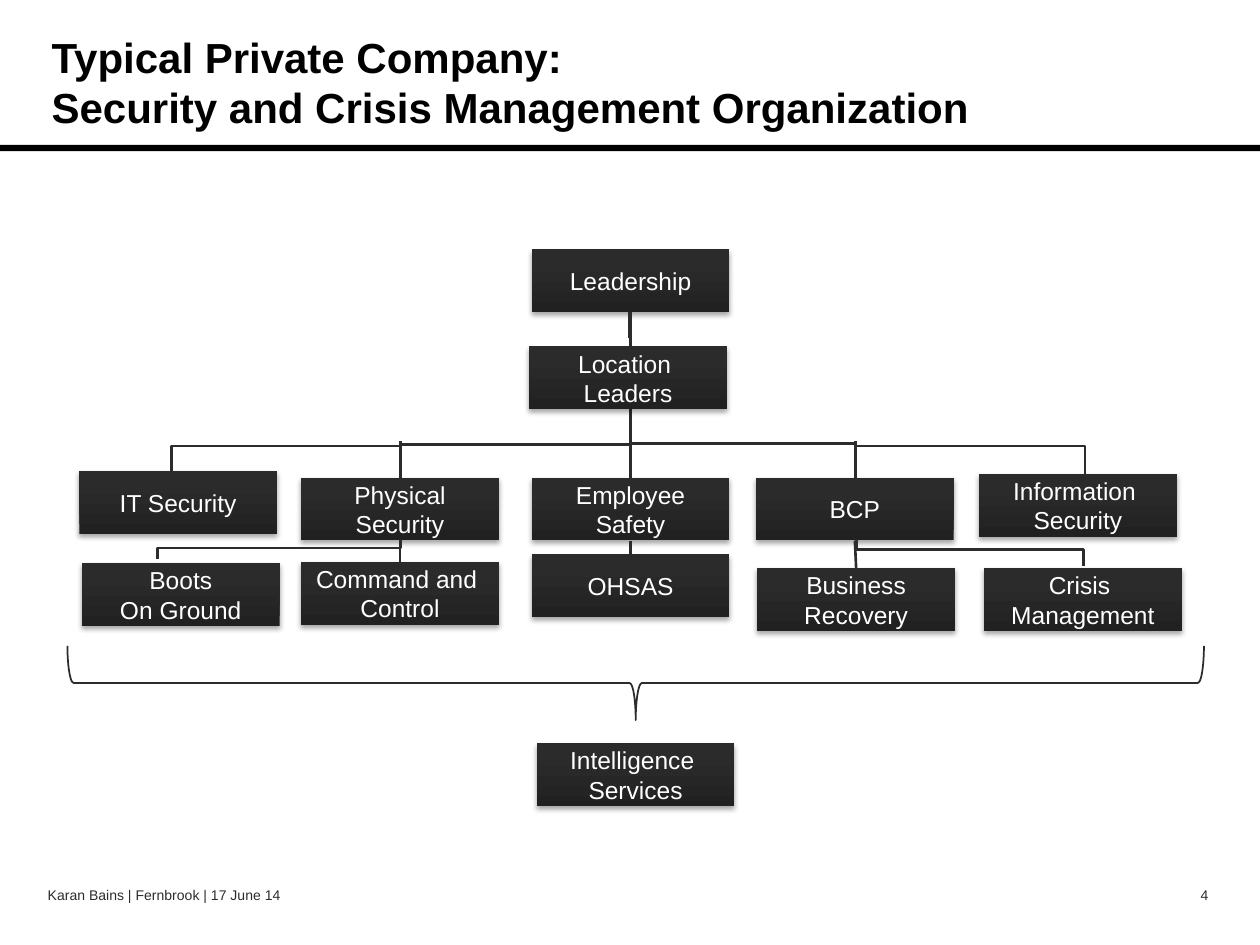
from lxml.etree import SubElement
from pptx import Presentation
from pptx.dml.color import RGBColor
from pptx.enum.shapes import MSO_CONNECTOR, MSO_SHAPE
from pptx.enum.text import MSO_ANCHOR, PP_ALIGN
from pptx.oxml.ns import qn
from pptx.util import Inches, Pt

BLACK = RGBColor(0x00, 0x00, 0x00)
WHITE = RGBColor(0xFF, 0xFF, 0xFF)
CHARCOAL = RGBColor(0x2C, 0x2C, 0x2C)
BOX_TOP = RGBColor(0x2B, 0x2B, 0x2B)
BOX_BOTTOM = RGBColor(0x21, 0x21, 0x21)
FONT = "Arial"
BOX_WIDTH, BOX_HEIGHT = 1.57, 0.5

presentation = Presentation()
presentation.slide_width, presentation.slide_height = Inches(10), Inches(7.5)
slide = presentation.slides.add_slide(presentation.slide_layouts[5])
shapes = slide.shapes


def add_box(text, left, top):
    """Add one dark organization box with a soft shadow."""
    box = shapes.add_shape(MSO_SHAPE.RECTANGLE, Inches(left), Inches(top),
                           Inches(BOX_WIDTH), Inches(BOX_HEIGHT))
    box.fill.gradient()
    box.fill.gradient_angle = 90
    for stop, color, position in zip(box.fill.gradient_stops, (BOX_BOTTOM, BOX_TOP), (0, 0.8)):
        stop.color.rgb = color
        stop.position = position
    box.line.fill.background()
    box.shadow.inherit = False
    effects = box._element.spPr.find(qn("a:effectLst"))
    shadow = SubElement(effects, qn("a:outerShdw"), blurRad=str(Pt(3.1)),
                        dist=str(Pt(1.8)), dir="5400000", rotWithShape="0")
    shadow_color = SubElement(shadow, qn("a:srgbClr"), val=str(BLACK))
    SubElement(shadow_color, qn("a:alpha"), val="35000")

    frame = box.text_frame
    frame.margin_left = frame.margin_right = frame.margin_top = frame.margin_bottom = 0
    frame.word_wrap = False
    frame.vertical_anchor = MSO_ANCHOR.MIDDLE
    frame.text = text
    for paragraph in frame.paragraphs:
        paragraph.alignment = PP_ALIGN.CENTER
        paragraph.font.name, paragraph.font.size = FONT, Pt(14)
        paragraph.font.color.rgb = WHITE
    return box


def add_line(kind, x1, y1, x2, y2, width=1.5):
    """Add a plain charcoal connector."""
    line = shapes.add_connector(kind, Inches(x1), Inches(y1), Inches(x2), Inches(y2))
    line.line.color.rgb, line.line.width = CHARCOAL, Pt(width)
    SubElement(line._element.spPr, qn("a:effectLst"))
    return line


# Title and the rule below it
title = shapes.title
title.left, title.top, title.width, title.height = map(Inches, (0.41, 0.14, 7.95, 0.91))
frame = title.text_frame
frame.margin_left = frame.margin_right = frame.margin_top = frame.margin_bottom = 0
frame.vertical_anchor = MSO_ANCHOR.BOTTOM
frame.word_wrap = True
frame.text = "Typical Private Company: \vSecurity and Crisis Management Organization"
paragraph = frame.paragraphs[0]
paragraph.alignment = PP_ALIGN.LEFT
paragraph.font.name, paragraph.font.size, paragraph.font.bold = FONT, Pt(24), True
paragraph.font.color.rgb = BLACK

rule = shapes.add_shape(MSO_SHAPE.RECTANGLE, 0, Inches(1.15), Inches(10), Inches(0.05))
rule.fill.solid()
rule.fill.fore_color.rgb = BLACK
rule.line.fill.background()
rule.shadow.inherit = False

# Footer and slide number
for text, left, top, width, alignment in (
    ("Karan Bains | Fernbrook | 17 June 14", 0.28, 6.99, 7.48, PP_ALIGN.LEFT),
    ("4", 6.96, 6.99, 2.73, PP_ALIGN.RIGHT),
):
    footer = shapes.add_textbox(*map(Inches, (left, top, width, 0.15)))
    footer.text_frame.word_wrap = True
    footer.text_frame.text = text
    paragraph = footer.text_frame.paragraphs[0]
    paragraph.alignment = alignment
    paragraph.font.name, paragraph.font.size = FONT, Pt(8)
    paragraph.font.color.rgb = CHARCOAL

# Leadership, departments and their teams
leadership = add_box("Leadership", 4.22, 1.98)
add_box("IT Security", 0.63, 3.74)
physical = add_box("Physical\nSecurity", 2.39, 3.79)
employee = add_box("Employee\nSafety", 4.22, 3.79)
continuity = add_box("BCP", 6.0, 3.79)
add_box("Information \nSecurity", 7.77, 3.76)
add_box("Boots\nOn Ground", 0.65, 4.47)
command = add_box("Command and \nControl", 2.39, 4.46)
ohsas = add_box("OHSAS", 4.22, 4.4)
recovery = add_box("Business\nRecovery", 6.01, 4.51)
add_box("Crisis \nManagement", 7.81, 4.51)

# Straight joins between stacked boxes; the trunk runs behind Location Leaders
for upper, lower in ((leadership, employee), (physical, command),
                     (employee, ohsas), (continuity, recovery)):
    join = add_line(MSO_CONNECTOR.STRAIGHT, 0, 0, 1, 1)
    join.begin_connect(upper, 2)
    join.end_connect(lower, 0)
add_line(MSO_CONNECTOR.STRAIGHT, 5, 2.48, 5, 2.68, 2.25)

# Elbow branches: start, height of the crossbar, end
for x1, y1, bar, x2, y2 in (
    (5, 3.24, 3.53, 3.18, 3.79),
    (5, 3.24, 3.52, 6.79, 3.79),
    (3.18, 3.5, 3.54, 1.36, 3.76),
    (6.79, 3.5, 3.54, 8.61, 3.78),
    (3.18, 4.28, 4.35, 1.25, 4.44),
    (6.8, 4.28, 4.36, 8.6, 4.49),
):
    # A quarter turn makes the elbow leave and arrive vertically
    drop, span = y2 - y1, abs(x2 - x1)
    left, top = (x1 + x2 - drop) / 2, (y1 + y2 - span) / 2
    elbow = add_line(MSO_CONNECTOR.ELBOW, left, top, left + drop, top + span)
    transform = elbow._element.spPr.find(qn("a:xfrm"))
    transform.set("rot", "5400000")
    if x2 > x1:
        transform.set("flipV", "1")
    adjustments = elbow._element.spPr.find(qn("a:prstGeom")).get_or_add_avLst()
    SubElement(adjustments, qn("a:gd"), name="adj1",
               fmla=f"val {round((bar - y1) / drop * 100000)}")

add_box("Location \nLeaders", 4.2, 2.75)

# Intelligence services gathered under a brace
add_box("Intelligence \nServices", 4.26, 5.9)
brace = shapes.add_shape(MSO_SHAPE.RIGHT_BRACE, *map(Inches, (4.75, 0.91, 0.59, 9.02)))
brace.rotation = 90
brace.fill.solid()
brace.fill.fore_color.rgb = WHITE
brace.line.color.rgb, brace.line.width = CHARCOAL, Pt(1)
brace.shadow.inherit = False

presentation.save("out.pptx")
